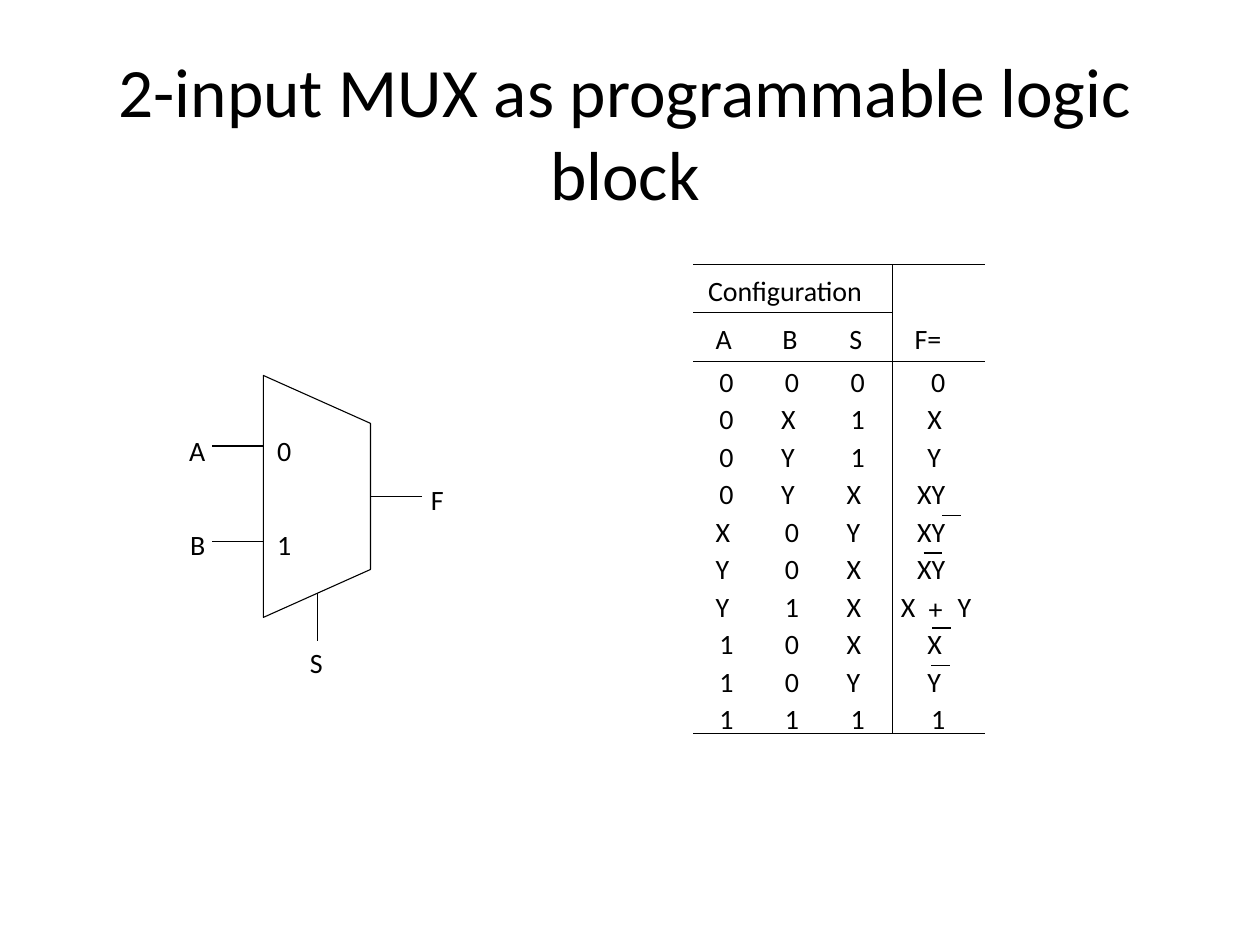
from lxml.etree import SubElement
from pptx import Presentation
from pptx.dml.color import RGBColor
from pptx.enum.shapes import MSO_CONNECTOR
from pptx.enum.text import MSO_ANCHOR, MSO_AUTO_SIZE, PP_ALIGN
from pptx.oxml.ns import qn
from pptx.util import Inches, Pt

BLACK = RGBColor(0x00, 0x00, 0x00)
THIN = 0.63
THICK = 0.88
LABEL_HEIGHT = 0.27
DIGIT_WIDTH = 0.12
LETTER_WIDTH = 0.15

GATE_CORNERS = [(2.09, 4.9), (2.94, 4.52), (2.94, 3.36), (2.09, 2.98)]
GATE_WIRES = [
    (3.35, 3.94, 2.94, 3.94),
    (2.09, 3.54, 1.68, 3.54),
    (2.09, 4.3, 1.68, 4.3),
    (2.52, 4.71, 2.52, 5.09),
]
GATE_LABELS = [
    ("F", 3.42, 3.83),
    ("A", 1.5, 3.44),
    ("0", 2.2, 3.44),
    ("B", 1.51, 4.19),
    ("S", 2.46, 5.12),
    ("1", 2.2, 4.19),
]

TABLE_LEFT, TABLE_DIVIDER, TABLE_RIGHT = 5.5, 7.08, 7.82
TABLE_TOP, TABLE_MIDDLE, TABLE_HEAD, TABLE_BOTTOM = 2.1, 2.48, 2.87, 5.82
TABLE_RULES = [
    (TABLE_LEFT, TABLE_TOP, TABLE_RIGHT, TABLE_TOP, THICK),
    (TABLE_DIVIDER, TABLE_TOP, TABLE_DIVIDER, TABLE_BOTTOM, THIN),
    (TABLE_LEFT, TABLE_HEAD, TABLE_RIGHT, TABLE_HEAD, THICK),
    (TABLE_LEFT, TABLE_BOTTOM, TABLE_RIGHT, TABLE_BOTTOM, THIN),
    (TABLE_LEFT, TABLE_MIDDLE, TABLE_DIVIDER, TABLE_MIDDLE, THIN),
]
TABLE_HEADINGS = [
    ("Configuration", 5.62, 2.17, 1.46),
    ("A", 5.68, 2.55, 0.16),
    ("B", 6.21, 2.55, 0.16),
    ("S", 6.74, 2.55, 0.15),
    ("F=", 7.26, 2.55, 0.26),
]
INPUT_RIGHTS = [5.83, 6.35, 6.87]
OUTPUT_RIGHT = 7.51
PRODUCT_RIGHT = 7.58
FIRST_ROW, LAST_ROW = 2.89, 5.57
OVERLINE_WIDTH = 0.15
ROWS = [
    ("000", "0", None),
    ("0X1", "X", None),
    ("0Y1", "Y", None),
    ("0YX", "XY", None),
    ("X0Y", "XY", 7.48),
    ("Y0X", "XY", 7.33),
    ("Y1X", "X+Y", None),
    ("10X", "X", 7.4),
    ("10Y", "Y", 7.39),
    ("111", "1", None),
]
SUM_TERMS = [("X", 7.15, 0, 0.15), ("+", 7.37, 0.02, 0.13), ("Y", 7.6, 0, 0.15)]


class SlideBuilder:
    """Hold the style and the current slide, and add each kind of element."""

    title_font = {"name": "Calibri", "size": Pt(39.6)}
    label_font = {"name": "Calibri", "size": Pt(16)}
    label_frame = {
        "margin_left": 0,
        "margin_top": 0,
        "margin_right": 0,
        "margin_bottom": 0,
        "word_wrap": False,
        "auto_size": MSO_AUTO_SIZE.SHAPE_TO_FIT_TEXT,
    }

    def __init__(self, presentation):
        self.slide = presentation.slides.add_slide(presentation.slide_layouts[5])
        self.shapes = self.slide.shapes

    def apply(self, target, values):
        for name, value in values.items():
            setattr(target, name, value)

    def style_font(self, font, values):
        self.apply(font, values)
        font.color.rgb = BLACK

    def style_line(self, shape, weight):
        shape.line.color.rgb = BLACK
        shape.line.width = Pt(weight)

    def start_group(self):
        self.shapes = self.slide.shapes.add_group_shape().shapes

    def title(self, text, left, top, width, height):
        shape = self.slide.shapes.title
        position = {"left": left, "top": top, "width": width, "height": height}
        self.apply(shape, {name: Inches(value) for name, value in position.items()})
        shape.text_frame.vertical_anchor = MSO_ANCHOR.MIDDLE
        paragraph = shape.text_frame.paragraphs[0]
        paragraph.alignment = PP_ALIGN.CENTER
        run = paragraph.add_run()
        run.text = text
        self.style_font(run.font, self.title_font)

    def label(self, text, left, top, width):
        shape = self.shapes.add_textbox(
            Inches(left), Inches(top), Inches(width), Inches(LABEL_HEIGHT)
        )
        self.apply(shape.text_frame, self.label_frame)
        run = shape.text_frame.paragraphs[0].add_run()
        run.text = text
        self.style_font(run.font, self.label_font)

    def symbol(self, text, right, top):
        width = sum(symbol_width(character) for character in text)
        self.label(text, right - width, top, width)

    def line(self, start_x, start_y, end_x, end_y, weight=THIN):
        connector = self.shapes.add_connector(
            MSO_CONNECTOR.STRAIGHT,
            Inches(start_x), Inches(start_y), Inches(end_x), Inches(end_y),
        )
        self.style_line(connector, weight)
        SubElement(connector._element.spPr, qn("a:effectLst"))

    def outline(self, corners):
        points = [(Inches(x), Inches(y)) for x, y in corners]
        builder = self.shapes.build_freeform(*points[0])
        builder.add_line_segments(points[1:], close=True)
        shape = builder.convert_to_shape()
        shape.shadow.inherit = False
        shape.fill.background()
        self.style_line(shape, THIN)


def symbol_width(character):
    return DIGIT_WIDTH if character.isdigit() else LETTER_WIDTH


def draw_multiplexer(builder):
    builder.outline(GATE_CORNERS)
    for wire in GATE_WIRES:
        builder.line(*wire)
    for text, left, top in GATE_LABELS:
        builder.label(text, left, top, symbol_width(text))


def draw_truth_table(builder):
    builder.start_group()
    for rule in TABLE_RULES:
        builder.line(*rule)
    for heading in TABLE_HEADINGS:
        builder.label(*heading)
    pitch = (LAST_ROW - FIRST_ROW) / (len(ROWS) - 1)
    for index, (inputs, output, overline) in enumerate(ROWS):
        top = FIRST_ROW + index * pitch
        for text, right in zip(inputs, INPUT_RIGHTS):
            builder.symbol(text, right, top)
        if output == "X+Y":
            for text, left, drop, width in SUM_TERMS:
                builder.label(text, left, top + drop, width)
        else:
            right = PRODUCT_RIGHT if output == "XY" else OUTPUT_RIGHT
            builder.symbol(output, right, top)
        if overline:
            builder.line(overline, top + 0.01, overline + OVERLINE_WIDTH, top + 0.01)


def main():
    presentation = Presentation()
    presentation.slide_width = Inches(10)
    presentation.slide_height = Inches(7.5)
    builder = SlideBuilder(presentation)
    builder.title("2-input MUX as programmable logic block", 0.25, 0.42, 9.42, 1.25)
    draw_multiplexer(builder)
    draw_truth_table(builder)
    presentation.save("out.pptx")


if __name__ == "__main__":
    main()
